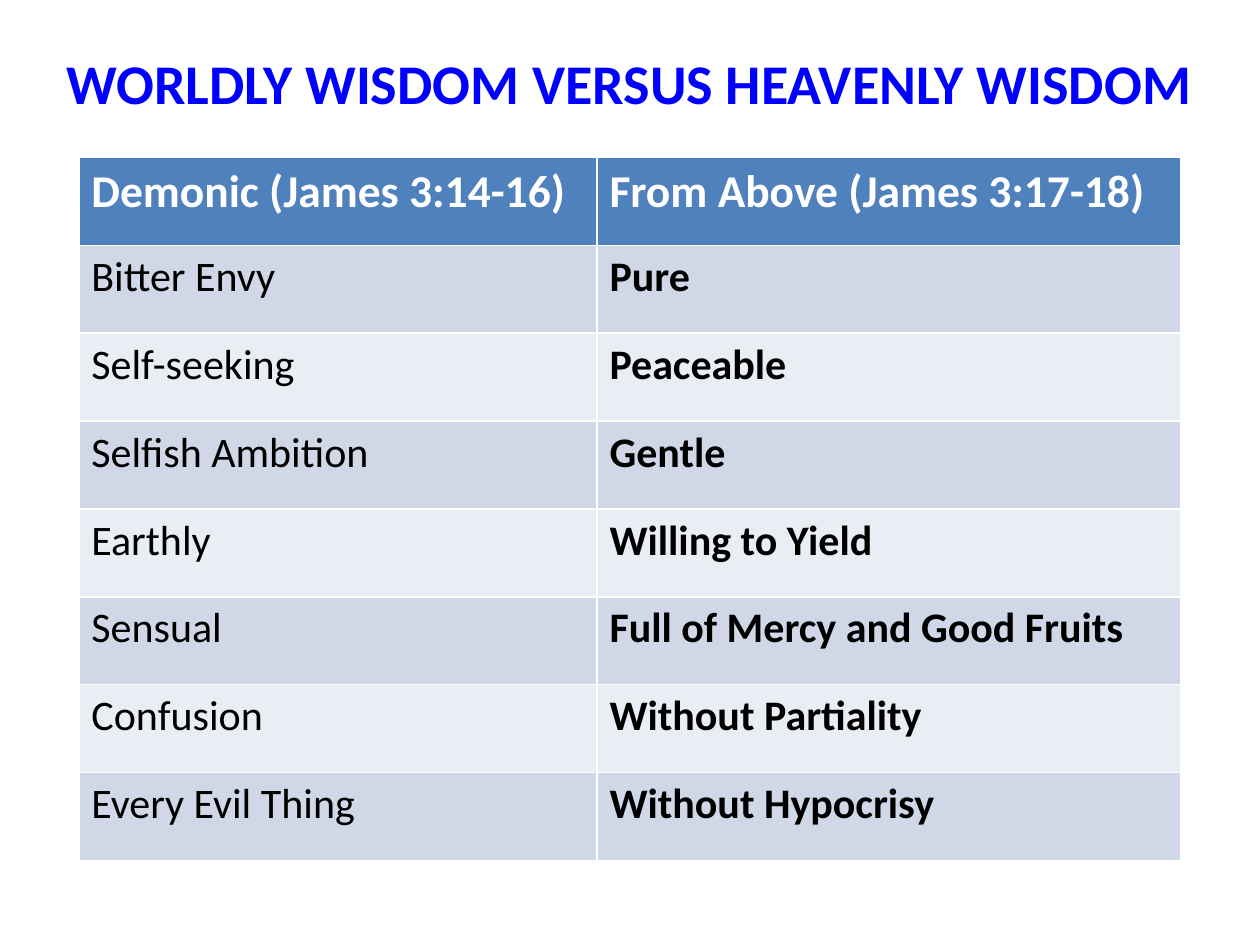
from pptx import Presentation
from pptx.dml.color import RGBColor
from pptx.enum.text import MSO_ANCHOR, MSO_AUTO_SIZE, PP_ALIGN
from pptx.util import Inches, Pt

CENTER, MIDDLE = PP_ALIGN.CENTER, MSO_ANCHOR.MIDDLE
FIT = MSO_AUTO_SIZE.SHAPE_TO_FIT_TEXT

BLUE = RGBColor(0x00, 0x00, 0xFF)
HEAD = RGBColor(0x4F, 0x81, 0xBD)
BANDS = RGBColor(0xE9, 0xED, 0xF4), RGBColor(0xD0, 0xD8, 0xE8)
WHITE = RGBColor(0xFF, 0xFF, 0xFF)
BLACK = RGBColor(0x00, 0x00, 0x00)

WIDTH, HEIGHT = Inches(10), Inches(7.5)
SHARE = 0.47  # left column's share of the table width

TITLE = "WORLDLY WISDOM VERSUS HEAVENLY WISDOM"
ROWS = [
    ("Demonic (James 3:14-16)", "From Above (James 3:17-18)"),
    ("Bitter Envy", "Pure"),
    ("Self-seeking", "Peaceable"),
    ("Selfish Ambition", "Gentle"),
    ("Earthly", "Willing to Yield"),
    ("Sensual", "Full of Mercy and Good Fruits"),
    ("Confusion", "Without Partiality"),
    ("Every Evil Thing", "Without Hypocrisy"),
]


def style(para, size, color, bold):
    font = para.font
    font.name, font.size, font.bold = "Calibri", Pt(size), bold
    font.color.rgb = color


def add_title(slide, box):
    title = slide.shapes.title
    title.left, title.top, title.width, title.height = box
    frame = title.text_frame
    frame.text = TITLE
    frame.word_wrap = False
    frame.auto_size = FIT
    frame.vertical_anchor = MIDDLE
    para = frame.paragraphs[0]
    para.alignment = CENTER
    style(para, 32, BLUE, True)


def add_traits(slide, box):
    """Fill the box with the two-column comparison table."""
    table = slide.shapes.add_table(len(ROWS), 2, *box).table
    left = int(box[2] * SHARE)
    table.columns[0].width = left
    table.columns[1].width = box[2] - left
    for r, row in enumerate(ROWS):
        top = r == 0
        for c, text in enumerate(row):
            cell = table.cell(r, c)
            cell.text = text
            cell.fill.solid()
            cell.fill.fore_color.rgb = HEAD if top else BANDS[r % 2]
            style(cell.text_frame.paragraphs[0], 26 if top else 24,
                  WHITE if top else BLACK, top or c == 1)


def main():
    deck = Presentation()
    deck.slide_width, deck.slide_height = WIDTH, HEIGHT
    slide = deck.slides.add_slide(deck.slide_layouts[5])
    add_title(slide, (Inches(0.39), Inches(0.33), Inches(9.21), Inches(0.64)))
    add_traits(slide, (WIDTH // 16, HEIGHT // 6, WIDTH * 7 // 8, Inches(5.58)))
    deck.save("out.pptx")


if __name__ == "__main__":
    main()
